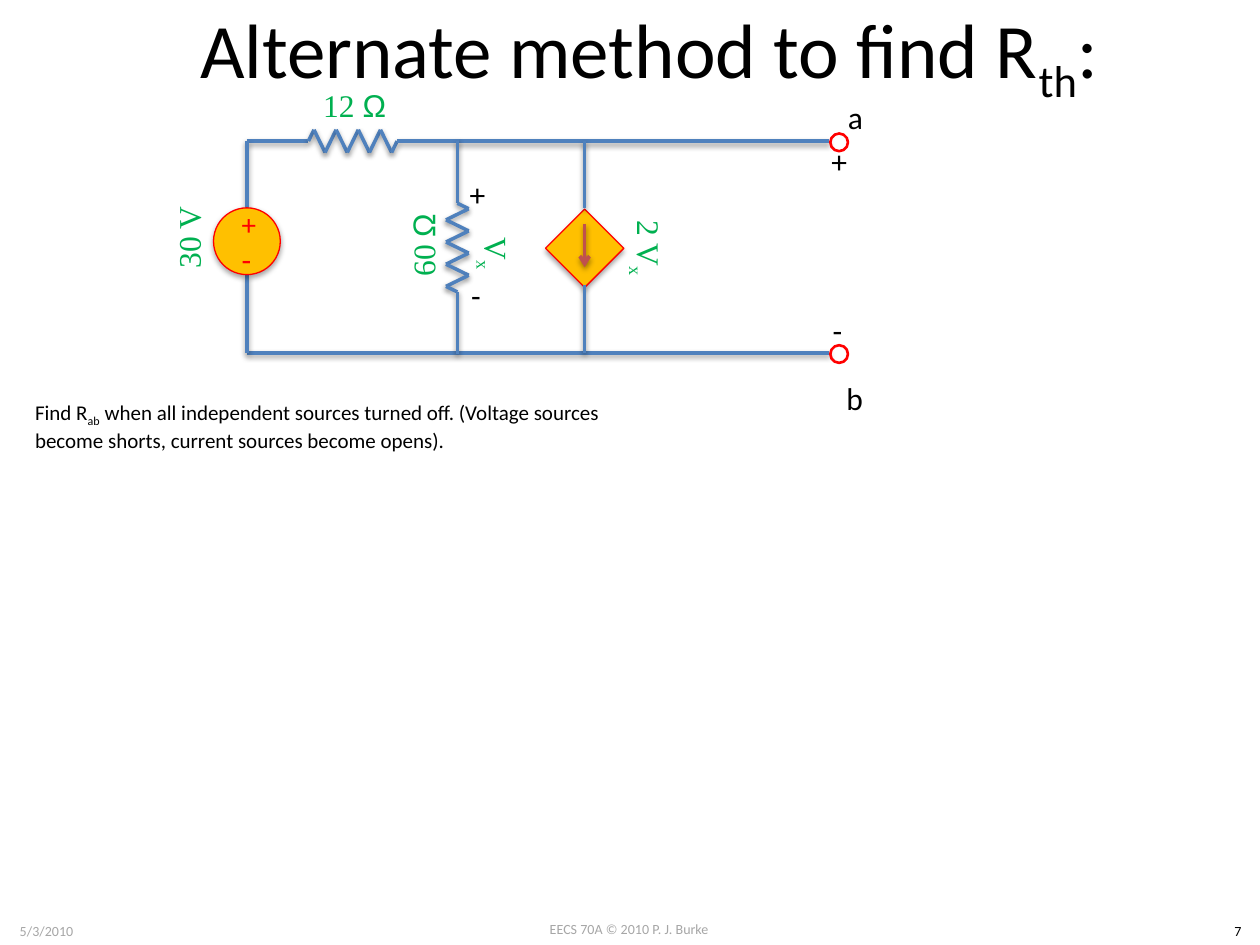
import collections
import itertools

import lxml.etree
import pptx
import pptx.dml.color
import pptx.enum.shapes
import pptx.enum.text
import pptx.oxml.ns
import pptx.util

RGB = pptx.dml.color.RGBColor
SHAPE = pptx.enum.shapes.MSO_SHAPE
ALIGN = pptx.enum.text.PP_ALIGN
ANCHOR = pptx.enum.text.MSO_ANCHOR
qn = pptx.oxml.ns.qn

BLACK = RGB(0x00, 0x00, 0x00)
GRAY = RGB(0xA6, 0xA6, 0xA6)
GREEN = RGB(0x00, 0xB0, 0x50)
RED = RGB(0xFF, 0x00, 0x00)
GOLD = RGB(0xFF, 0xC0, 0x00)
BLUE = RGB(0x4F, 0x81, 0xBD)
BRICK = RGB(0xC0, 0x50, 0x4D)

COLS, ROWS = 100, 75
WIDTH, HEIGHT = pptx.util.Inches(10), pptx.util.Inches(7.5)
Box = collections.namedtuple("Box", "left top width height")
SUB = {"sub": True}
OHM = ("Ω", {"font": "Arial"})


def col(n):
    return round(n * WIDTH / COLS)


def row(n):
    return round(n * HEIGHT / ROWS)


def emu(box):
    return col(box.left), row(box.top), col(box.width), row(box.height)


def centered(x, y, width, height):
    return Box(x - width / 2, y - height / 2, width, height)


def add_shadow(shape, alpha=38, distance=1.6):
    effects = lxml.etree.SubElement(shape._element.spPr, qn("a:effectLst"))
    shadow = lxml.etree.SubElement(
        effects, qn("a:outerShdw"), blurRad=str(pptx.util.Pt(3.1)),
        dist=str(pptx.util.Pt(distance)), dir="5400000", rotWithShape="0")
    color = lxml.etree.SubElement(shadow, qn("a:srgbClr"), val=str(BLACK))
    lxml.etree.SubElement(color, qn("a:alpha"), val=str(alpha * 1000))


def add_text(s, box, runs, size=18, font="Calibri", color=BLACK,
             align=ALIGN.CENTER, anchor=ANCHOR.TOP, wrap=True, rotation=0):
    sp = s.shapes.add_textbox(*emu(box))
    sp.rotation = rotation
    tf = sp.text_frame
    tf.word_wrap = wrap
    tf.vertical_anchor = anchor
    p = tf.paragraphs[0]
    p.alignment = align
    for text, fmt in runs:
        r = p.add_run()
        r.text = text
        r.font.size = pptx.util.Pt(size)
        r.font.name = fmt.get("font", font)
        r.font.color.rgb = color
        if fmt.get("sub"):
            r._r.get_or_add_rPr().set("baseline", "-25000")


def add_label(s, x, y, runs, rotation=0):
    add_text(s, centered(x, y, 11.9, 7.3), runs, font="Times New Roman",
             color=GREEN, anchor=ANCHOR.MIDDLE, rotation=rotation)


def add_wire(s, start, end, color=BLUE, arrow=False):
    wire = s.shapes.add_connector(
        pptx.enum.shapes.MSO_CONNECTOR.STRAIGHT,
        col(start[0]), row(start[1]), col(end[0]), row(end[1]))
    wire.line.color.rgb = color
    wire.line.width = pptx.util.Pt(2)
    if arrow:
        lxml.etree.SubElement(wire.line._get_or_add_ln(), qn("a:tailEnd"), type="arrow")
    add_shadow(wire)


def add_outline(s, kind, box, fill=None, weight=0.75):
    sp = s.shapes.add_shape(kind, *emu(box))
    sp.shadow.inherit = False
    sp.line.color.rgb = RED
    sp.line.width = pptx.util.Pt(weight)
    if fill is None:
        sp.fill.background()
    else:
        sp.fill.solid()
        sp.fill.fore_color.rgb = fill
        sp._element.spPr.remove(sp._element.spPr.find(qn("a:effectLst")))
        add_shadow(sp, 35, 1.8)
    return sp


def resistor(s, box, vertical=False):
    total = box.height if vertical else box.width
    length, teeth, swing = 7.04, 8, 0.9
    step = length / teeth
    lead = (total - length) / 2
    points = [(0, 0), (lead, 0)]
    points += [(lead + (i + 0.5) * step, -swing if i % 2 == 0 else swing)
               for i in range(teeth)]
    points += [(total - lead, 0), (total, 0)]
    if vertical:
        points = [(box.left - side, box.top + along) for along, side in points]
    else:
        points = [(box.left + along, box.top + side) for along, side in points]
    for start, end in itertools.pairwise(points):
        add_wire(s, start, end)


def voltage_source(s, box):
    x, y, radius = box.left, box.top + 7.95, 2.65
    add_wire(s, (x, box.top + box.height), (x, y + radius))
    add_wire(s, (x, y - radius), (x, box.top))
    add_outline(s, SHAPE.OVAL, centered(x, y, 2 * radius, 2 * radius), GOLD)
    for sign, offset, size in (("+", -1.4, 16.6), ("-", 1.4, 18)):
        add_text(s, centered(x - 0.1, y + offset, 2.6, 3.3), [(sign, {})],
                 size=size, color=RED, anchor=ANCHOR.MIDDLE)
    add_label(s, x - 4.65, y - 0.3, [("30 V", {})], 270)


def dependent_source(s, box):
    x, y = box.left, box.top + 8.5
    add_outline(s, SHAPE.RECTANGLE, centered(x, y, 4.4, 4.4), GOLD).rotation = 225
    add_wire(s, (x, y + 2.9), (x, box.top + box.height))
    add_wire(s, (x, box.top), (x, y - 3.2))
    add_wire(s, (x, y - 1.9), (x, y + 1.5), BRICK, arrow=True)
    add_label(s, x + 4.95, y, [("2 V", {}), ("x", SUB)], 90)


def circuit(s, box):
    left, top, width, height = box
    bottom, middle = top + height, left + 16.7
    add_wire(s, (left, bottom), (left + width, bottom))
    add_wire(s, (middle, top), (left + width, top))
    resistor(s, Box(left, top, 16.8, 0))
    resistor(s, Box(middle, top, 0, height + 0.1), vertical=True)
    voltage_source(s, box)
    dependent_source(s, Box(left + 26.8, top, 0, height))
    add_label(s, left + 8.55, top - 2.85, [("12 ", {}), OHM])
    add_label(s, left + 13.95, top + 8.25, [("60 ", {}), OHM], 270)
    add_label(s, left + 19.65, top + 8.95, [("V", {}), ("x", SUB)], 90)
    for y in (top, bottom):
        add_outline(s, SHAPE.OVAL, centered(left + 47, y + 0.1, 1.4, 1.4), weight=1.5)
    signs = (("a", 46.7, -3.9, 3.2), ("b", 46.6, 18.4, 3.4),
             ("+", 45.4, -0.4, 3.3), ("-", 45.5, 13, 2.8),
             ("+", 16.7, 2.2, 3.3), ("-", 16.8, 10.2, 2.8))
    for sign, x, y, w in signs:
        add_text(s, Box(left + x, top + y, w, 4), [(sign, {})],
                 align=ALIGN.LEFT, wrap=False)


def title(s, box):
    add_text(s, box, [("Alternate method to find R", {}), ("th", SUB), (":", {})],
             size=44, anchor=ANCHOR.MIDDLE)


def note(s, box):
    add_text(s, box, [
        ("Find R", {}), ("ab", SUB),
        (" when all independent sources turned off. (Voltage sources become "
         "shorts, current sources become opens).", {})], size=12, align=ALIGN.LEFT)


def footer(s, box):
    parts = (("EECS 70A © 2010 P. J. Burke", 38.3, -0.1, 23.3, GRAY),
             ("5/3/2010", 0, 0, 7.4, GRAY),
             ("7", box.width - 3.5, 0, 3.5, BLACK))
    for text, x, y, w, color in parts:
        add_text(s, Box(box.left + x, box.top + y, w, box.height), [(text, {})],
                 size=8, color=color)


def main():
    prs = pptx.Presentation()
    prs.slide_width, prs.slide_height = WIDTH, HEIGHT
    s = prs.slides.add_slide(prs.slide_layouts[6])
    footer(s, Box(0, 72.7, COLS, 2.4))
    title(s, Box(6.5, 0, 90, 8.6))
    circuit(s, Box(19.6, 11.2, 46.2, 16.8))
    note(s, Box(1.8, 31.2, 49.7, 5))
    prs.save("out.pptx")


if __name__ == "__main__":
    main()
